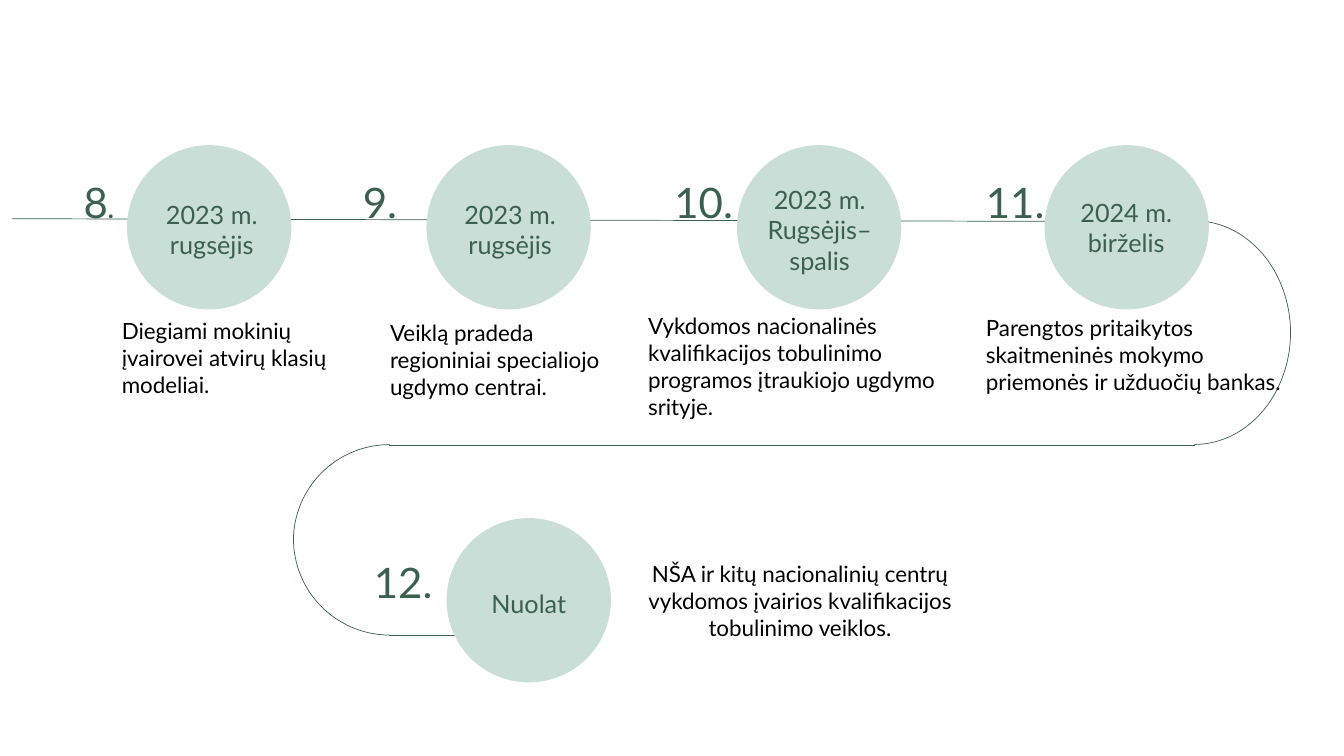
import dataclasses
import typing

import pptx
import pptx.dml.color
import pptx.enum.shapes
import pptx.enum.text
import pptx.oxml
import pptx.util

PX = 9144  # EMU in one px, 100 px to the inch
FONT = "Lato"
GREEN = pptx.dml.color.RGBColor(0x3B, 0x60, 0x50)
MINT = pptx.dml.color.RGBColor(0xC8, 0xDE, 0xD6)
BLACK = pptx.dml.color.RGBColor(0, 0, 0)
SHAPE = pptx.enum.shapes.MSO_SHAPE
LEFT = pptx.enum.text.PP_ALIGN.LEFT
CENTER = pptx.enum.text.PP_ALIGN.CENTER
DISC = 163


class Box(typing.NamedTuple):
    left: int
    top: int
    width: int
    height: int


class Line(typing.NamedTuple):
    x1: int
    y1: int
    x2: int
    y2: int


class Arc(typing.NamedTuple):
    box: Box
    turn: int


@dataclasses.dataclass
class Step:
    num: str
    num_box: Box
    disc: tuple[int, int]
    date: str
    date_box: Box
    note: str
    note_box: Box
    align: typing.Any = LEFT
    dot_size: int = 30


LINES = [
    Line(12, 217, 1199, 220),
    Line(386, 442, 1185, 442),
    Line(386, 630, 515, 630),
]
ARCS = [
    Arc(Box(291, 439, 191, 191), 180),
    Arc(Box(291, 441, 191, 191), 270),
    Arc(Box(1089, 219, 191, 223), 0),
    Arc(Box(1073, 234, 223, 191), 90),
]
STEPS = [
    Step("8", Box(73, 170, 61, 61), (126, 144),
         "2023 m.\nrugsėjis", Box(147, 193, 126, 71),
         "Diegiami mokinių įvairovei atvirų klasių modeliai.",
         Box(111, 310, 262, 64), dot_size=18),
    Step("9", Box(350, 170, 97, 61), (423, 144),
         "2023 m.\nrugsėjis", Box(443, 193, 126, 71),
         "Veiklą pradeda regioniniai specialiojo ugdymo centrai.",
         Box(377, 312, 242, 91)),
    Step("10", Box(659, 170, 84, 61), (731, 144),
         "2023 m.\nRugsėjis–spalis", Box(750, 178, 126, 101),
         "Vykdomos nacionalinės kvalifikacijos tobulinimo programos "
         "įtraukiojo ugdymo srityje.",
         Box(633, 305, 346, 91)),
    Step("11", Box(968, 170, 88, 61), (1036, 144),
         "2024 m.\nbirželis", Box(1054, 191, 126, 71),
         "Parengtos pritaikytos skaitmeninės mokymo priemonės "
         "ir užduočių bankas.",
         Box(968, 307, 315, 91)),
    Step("12", Box(361, 547, 84, 61), (443, 514),
         "Nuolat", Box(443, 579, 163, 40),
         "NŠA ir kitų nacionalinių centrų vykdomos įvairios "
         "kvalifikacijos tobulinimo veiklos.",
         Box(606, 551, 375, 114), align=CENTER),
]


def scale(nums: typing.Iterable[int]) -> list[int]:
    return [n * PX for n in nums]


def add_run(para, text: str, size: int, tone, bold: bool = False) -> None:
    run = para.add_run()
    run.text = text
    run.font.name = FONT
    run.font.size = pptx.util.Pt(size)
    run.font.bold = bold
    run.font.color.rgb = tone


def add_text(slide, box: Box, text: str, *, size: int, tone=GREEN, align=LEFT):
    """Add a wrapped text box, one paragraph a line, and return its last one."""
    frame = slide.shapes.add_textbox(*scale(box)).text_frame
    frame.word_wrap = True
    for i, line in enumerate(text.split("\n")):
        para = frame.add_paragraph() if i else frame.paragraphs[0]
        para.alignment = align
        add_run(para, line, size, tone)
    return para


def ink(line) -> None:
    line.color.rgb = GREEN
    line.width = pptx.util.Pt(0.5)


def add_line(slide, ends: Line) -> None:
    line = slide.shapes.add_connector(
        pptx.enum.shapes.MSO_CONNECTOR.STRAIGHT, *scale(ends))
    ink(line.line)
    props = line._element.spPr
    props.append(pptx.oxml.parse_xml(
        '<a:effectLst xmlns:a='
        '"http://schemas.openxmlformats.org/drawingml/2006/main"/>'))


def add_arc(slide, arc: Arc) -> None:
    shape = slide.shapes.add_shape(SHAPE.ARC, *scale(arc.box))
    shape.rotation = arc.turn
    shape.shadow.inherit = False
    shape.fill.background()
    ink(shape.line)


def add_step(slide, step: Step) -> None:
    disc = slide.shapes.add_shape(SHAPE.OVAL, *scale((*step.disc, DISC, DISC)))
    disc.shadow.inherit = False
    disc.fill.solid()
    disc.fill.fore_color.rgb = MINT
    disc.line.fill.background()
    para = add_text(slide, step.num_box, step.num, size=30)
    add_run(para, ".", step.dot_size, GREEN, bold=step.dot_size < 30)
    add_text(slide, step.date_box, step.date, size=18, align=CENTER)
    add_text(slide, step.note_box, step.note, size=16, tone=BLACK,
             align=step.align)


def main() -> None:
    deck = pptx.Presentation()
    deck.slide_width, deck.slide_height = scale((1333, 750))
    slide = deck.slides.add_slide(deck.slide_layouts[6])
    for line in LINES:
        add_line(slide, line)
    for arc in ARCS:
        add_arc(slide, arc)
    for step in STEPS:
        add_step(slide, step)
    deck.save("out.pptx")


if __name__ == "__main__":
    main()
